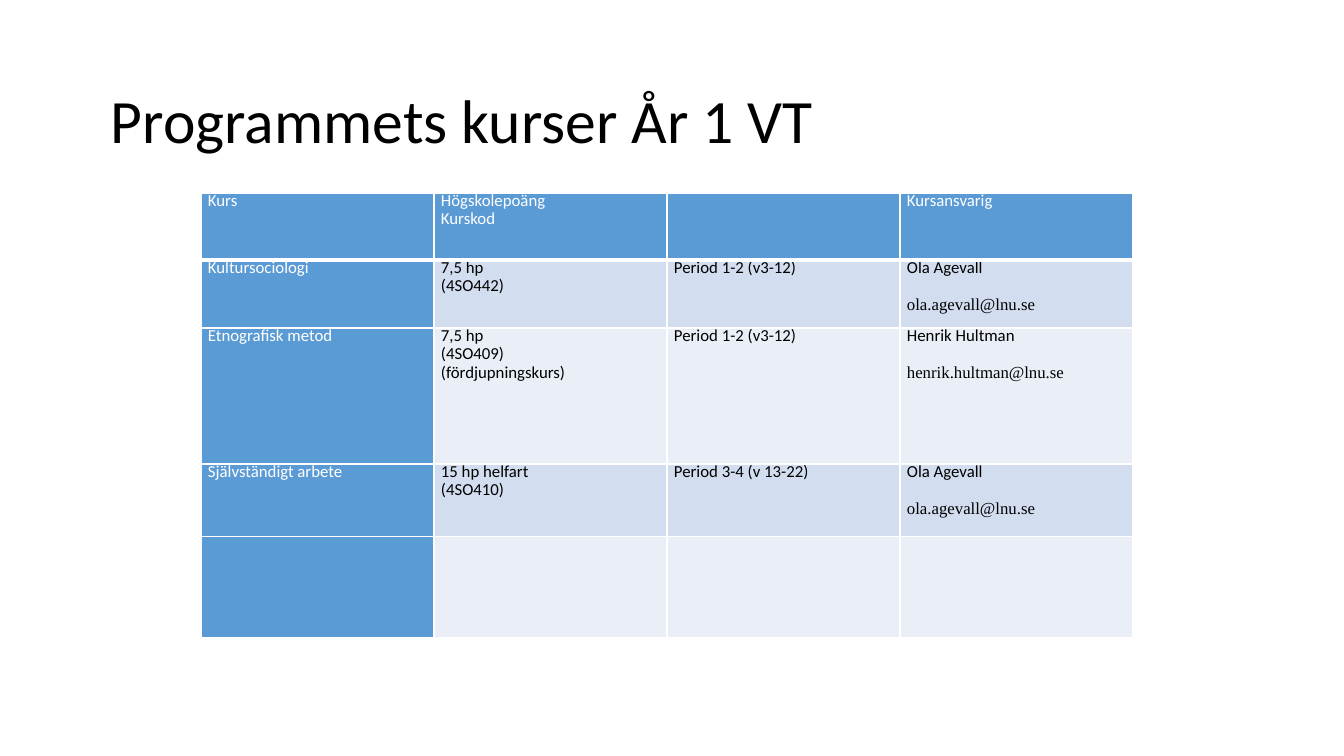
"""Build the slide listing the spring courses of programme year 1."""
from typing import NamedTuple

from lxml import etree
from pptx import Presentation
from pptx.dml.color import RGBColor
from pptx.enum.text import MSO_ANCHOR
from pptx.oxml.ns import qn
from pptx.util import Emu, Pt

ANCHOR_MIDDLE = MSO_ANCHOR.MIDDLE
EMU_PER_PX = 914400 / 100.8
WHITE, BLACK = "FFFFFF", "000000"
BLUE, BAND_DARK, BAND_LIGHT = "5B9BD5", "D2DEEF", "EAEFF7"
BODY_FONT, EMAIL_FONT = "Calibri", "Times New Roman"
COLUMN_WIDTH = 233


class Row(NamedTuple):
    height: int
    course: str = ""
    credits: str = ""
    period: str = ""
    teacher: str = ""


ROWS = [
    Row(67, "Kurs", "Högskolepoäng\nKurskod", "", "Kursansvarig"),
    Row(68, "Kultursociologi", "7,5 hp\n(4SO442)", "Period 1-2 (v3-12)",
        "Ola Agevall\nola.agevall@lnu.se"),
    Row(136, "Etnografisk metod", "7,5 hp\n(4SO409)\n(fördjupningskurs)",
        "Period 1-2 (v3-12)", "Henrik Hultman\nhenrik.hultman@lnu.se"),
    Row(73, "Självständigt arbete", "15 hp helfart\n(4SO410)",
        "Period 3-4 (v 13-22)", "Ola Agevall\nola.agevall@lnu.se"),
    Row(101),
]


def px(length: int) -> Emu:
    """Turn pixels into EMU."""
    return Emu(round(length * EMU_PER_PX))


def color(value: str) -> RGBColor:
    """Turn a hex string into a colour."""
    return RGBColor.from_string(value)


def set_font(paragraph, name: str, size: int, value: str) -> None:
    """Set the font of a whole paragraph."""
    paragraph.font.name = name
    paragraph.font.size = Pt(size)
    paragraph.font.bold = False
    paragraph.font.color.rgb = color(value)


def add_title(slide, text: str) -> None:
    """Add the slide title."""
    shape = slide.shapes.add_textbox(px(101), px(68), px(1142), px(111))
    frame = shape.text_frame
    frame.word_wrap = True
    frame.vertical_anchor = ANCHOR_MIDDLE
    paragraph = frame.paragraphs[0]
    paragraph.text = text
    paragraph.line_spacing = 0.9
    set_font(paragraph, BODY_FONT, 44, BLACK)


def set_borders(cell, top: int, bottom: int) -> None:
    """Draw white cell borders, with widths in points."""
    properties = cell._tc.get_or_add_tcPr()
    for side, width in (("L", 1), ("R", 1), ("T", top), ("B", bottom)):
        line = etree.SubElement(properties, qn(f"a:ln{side}"), w=str(Pt(width)))
        fill = etree.SubElement(line, qn("a:solidFill"))
        etree.SubElement(fill, qn("a:srgbClr"), val=WHITE)


def fill_cell(cell, text: str, background: str) -> None:
    """Give a cell its background and text."""
    cell.fill.solid()
    cell.fill.fore_color.rgb = color(background)
    cell.margin_left = cell.margin_right = px(7)
    cell.margin_top = cell.margin_bottom = 0
    cell.text_frame.text = text
    for paragraph in cell.text_frame.paragraphs:
        is_email = "@" in paragraph.text
        paragraph.line_spacing = Pt(13)
        if is_email:
            paragraph.space_before = Pt(13)
        set_font(paragraph, EMAIL_FONT if is_email else BODY_FONT, 12,
                 WHITE if background == BLUE else BLACK)


def add_courses(slide) -> None:
    """Add the course table."""
    height = sum(row.height for row in ROWS)
    frame = slide.shapes.add_table(len(ROWS), 4, px(201), px(193),
                                   px(4 * COLUMN_WIDTH), px(height))
    table = frame.table
    for column in table.columns:
        column.width = px(COLUMN_WIDTH)
    for row_index, row in enumerate(ROWS):
        table.rows[row_index].height = px(row.height)
        band = BAND_DARK if row_index % 2 else BAND_LIGHT
        for column_index, text in enumerate(row[1:]):
            cell = table.cell(row_index, column_index)
            is_heading = row_index == 0 or column_index == 0
            set_borders(cell, 3 if row_index == 1 else 1, 3 if row_index == 0 else 1)
            fill_cell(cell, text, BLUE if is_heading else band)


def main() -> None:
    """Build and save the presentation."""
    presentation = Presentation()
    presentation.slide_width, presentation.slide_height = px(1344), px(756)
    slide = presentation.slides.add_slide(presentation.slide_layouts[6])
    add_title(slide, "Programmets kurser År 1 VT")
    add_courses(slide)
    presentation.save("out.pptx")


if __name__ == "__main__":
    main()
